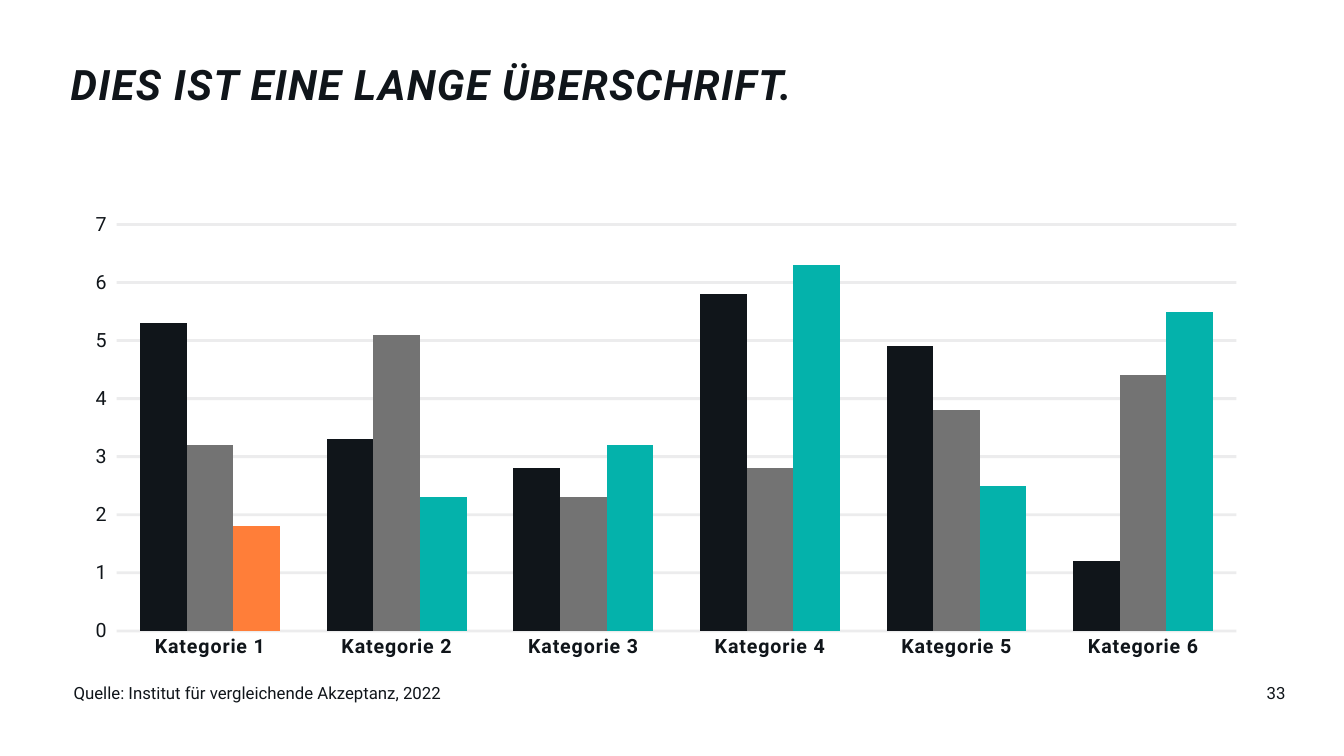
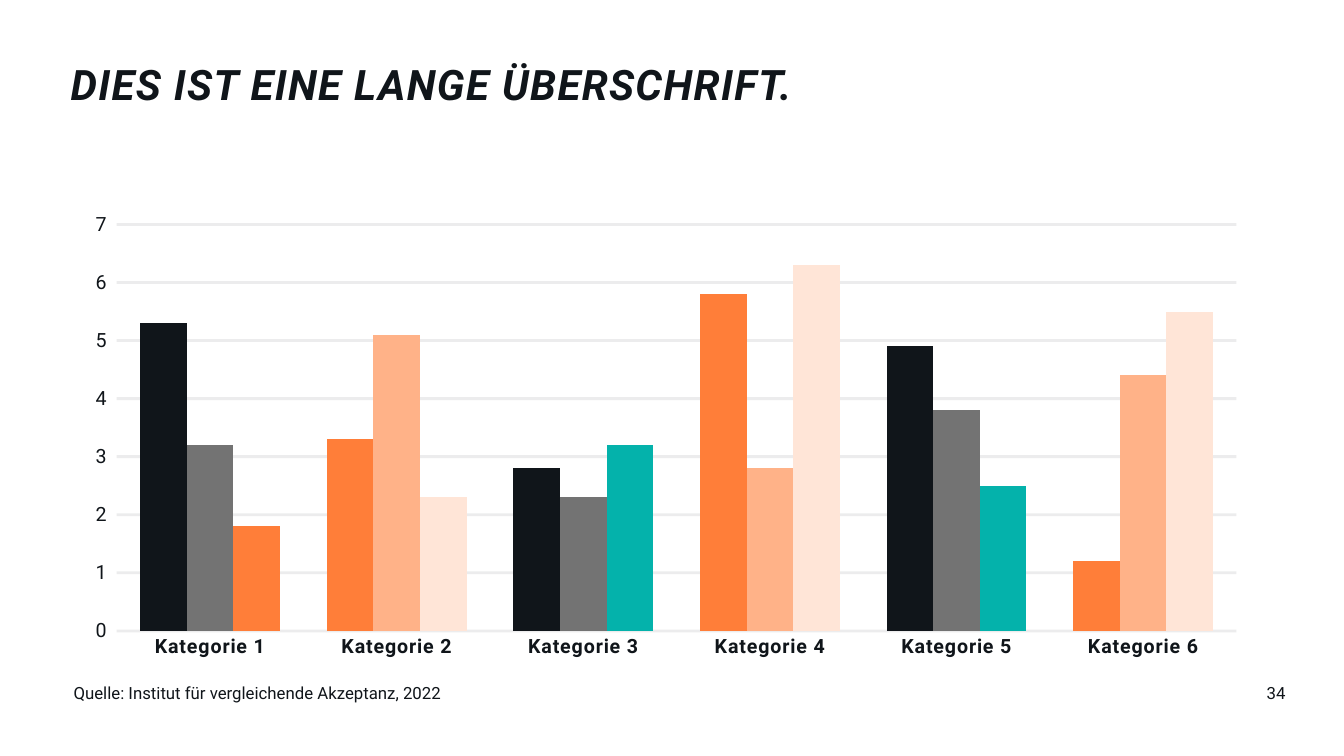
from dataclasses import dataclass, field

from lxml import etree
from pptx import Presentation
from pptx.chart.data import CategoryChartData as ChartData
from pptx.dml.color import RGBColor
from pptx.enum.chart import XL_CHART_TYPE as ChartType, XL_TICK_MARK as TickMark
from pptx.enum.text import PP_ALIGN as Align
from pptx.oxml.ns import qn
from pptx.util import Inches, Pt

FONT = "Roboto"
INK, GRAY, TEAL = "10151A", "737373", "04B2AB"
ORANGE, APRICOT, BLUSH = "FF7E39", "FFB288", "FFE5D7"

TITLE = "DIES IST EINE LANGE ÜBERSCHRIFT."
SOURCE = "Quelle: Institut für vergleichende Akzeptanz, 2022"
CATEGORIES = [f"Kategorie {number}" for number in range(1, 7)]
PLOT_LAYOUT = {"x": 0.038, "y": 0.047, "w": 0.942, "h": 0.873}


@dataclass(frozen=True)
class Series:
    """A chart series with its usual colour."""
    name: str
    color: str
    values: tuple[float, ...]


@dataclass(frozen=True)
class ChartSlide:
    """A slide number and the highlights, by series and category index."""
    number: int
    highlights: dict[tuple[int, int], str] = field(default_factory=dict)


SERIES = (
    Series("Series 1", INK, (5.3, 3.3, 2.8, 5.8, 4.9, 1.2)),
    Series("Series 2", GRAY, (3.2, 5.1, 2.3, 2.8, 3.8, 4.4)),
    Series("Series 3", TEAL, (1.8, 2.3, 3.2, 6.3, 2.5, 5.5)),
)
ALTERNATE = {
    (row, column): color
    for row, color in enumerate((ORANGE, APRICOT, BLUSH))
    for column in (1, 3, 5)
}
FIRST_TEAL = {(2, 0): ORANGE}
SLIDES = (
    ChartSlide(33, FIRST_TEAL),
    ChartSlide(34, FIRST_TEAL | ALTERNATE),
)


def rgb(color: str) -> RGBColor:
    """Turn a hex string into a colour."""
    return RGBColor.from_string(color)


def fill_solid(target, color: str) -> None:
    """Give a chart series or point a plain fill."""
    target.format.fill.solid()
    target.format.fill.fore_color.rgb = rgb(color)


def style_font(font, size: float, bold: bool = False, italic: bool = False) -> None:
    """Apply the shared typeface and ink colour."""
    font.name = FONT
    font.size = Pt(size)
    font.bold = bold
    font.italic = italic
    font.color.rgb = rgb(INK)


def add_text(slide, text: str, left: float, top: float, width: float, height: float, *,
             size: float = 12, bold: bool = False, italic: bool = False,
             align: Align = Align.LEFT, line_spacing: float = 1.0,
             letter_spacing: int = 0) -> None:
    """Add a text box without insets."""
    shape = slide.shapes.add_textbox(Inches(left), Inches(top), Inches(width), Inches(height))
    frame = shape.text_frame
    frame.word_wrap = True
    frame.margin_left = frame.margin_right = frame.margin_top = frame.margin_bottom = 0
    paragraph = frame.paragraphs[0]
    paragraph.alignment = align
    paragraph.line_spacing = line_spacing
    run = paragraph.add_run()
    run.text = text
    style_font(run.font, size, bold, italic)
    if letter_spacing:
        run.font._element.set("spc", str(letter_spacing))


def place_plot(chart) -> None:
    """Fix the inner plot area within the chart frame."""
    plot_area = chart._chartSpace.find(".//" + qn("c:plotArea"))
    for old_layout in plot_area.findall(qn("c:layout")):
        plot_area.remove(old_layout)
    layout = etree.Element(qn("c:layout"))
    manual = etree.SubElement(layout, qn("c:manualLayout"))
    settings = {"layoutTarget": "inner", "xMode": "edge", "yMode": "edge", **PLOT_LAYOUT}
    for name, value in settings.items():
        etree.SubElement(manual, qn(f"c:{name}")).set("val", str(value))
    plot_area.insert(0, layout)


def style_axes(chart) -> None:
    """Format both axes and the faint gridlines."""
    category_axis, value_axis = chart.category_axis, chart.value_axis
    for axis in (category_axis, value_axis):
        style_font(axis.tick_labels.font, 14, bold=axis is category_axis)
        axis.format.line.fill.background()
        axis.minor_tick_mark = TickMark.NONE
    category_axis.major_tick_mark = TickMark.NONE
    label_properties = category_axis._element.find(
        "/".join(qn(tag) for tag in ("c:txPr", "a:p", "a:pPr", "a:defRPr")))
    label_properties.set("spc", "50")
    value_axis.major_tick_mark = TickMark.OUTSIDE
    value_axis.minimum_scale, value_axis.maximum_scale = 0, 7
    value_axis.major_unit = 1
    value_axis.has_major_gridlines = True
    line = value_axis.major_gridlines.format.line
    line.width = Pt(2)
    line.color.rgb = rgb(INK)
    grid_color = value_axis._element.find(
        qn("c:majorGridlines") + "//" + qn("a:srgbClr"))
    etree.SubElement(grid_color, qn("a:alpha")).set("val", "8000")


def add_column_chart(slide, highlights: dict[tuple[int, int], str]) -> None:
    """Add the clustered columns and colour the highlighted ones."""
    data = ChartData()
    data.categories = CATEGORIES
    for series in SERIES:
        data.add_series(series.name, series.values)
    chart = slide.shapes.add_chart(
        ChartType.COLUMN_CLUSTERED, Inches(0.71), Inches(2.01),
        Inches(11.79), Inches(4.62), data).chart
    chart.has_title = chart.has_legend = False
    style_font(chart.font, 10)
    plot = chart.plots[0]
    plot.gap_width, plot.overlap = 100, 0
    plot.vary_by_categories = False
    for column_series, series in zip(plot.series, SERIES):
        column_series.invert_if_negative = False
        fill_solid(column_series, series.color)
    for (row, column), color in sorted(highlights.items()):
        fill_solid(plot.series[row].points[column], color)
    style_axes(chart)
    place_plot(chart)


def add_chart_slide(presentation, content: ChartSlide) -> None:
    """Add one slide with title, chart, source and number."""
    slide = presentation.slides.add_slide(presentation.slide_layouts[6])
    add_text(slide, TITLE, 0.7, 0.66, 8.2, 1.12, size=30, bold=True, italic=True,
             line_spacing=0.85, letter_spacing=100)
    add_column_chart(slide, content.highlights)
    add_text(slide, SOURCE, 0.73, 6.77, 8.17, 0.4)
    add_text(slide, str(content.number), 10.6, 6.77, 2.15, 0.4, align=Align.RIGHT)


def main() -> None:
    """Build and save the presentation."""
    presentation = Presentation()
    presentation.slide_width = Inches(13.33)
    presentation.slide_height = Inches(7.5)
    for content in SLIDES:
        add_chart_slide(presentation, content)
    presentation.save("out.pptx")


if __name__ == "__main__":
    main()
